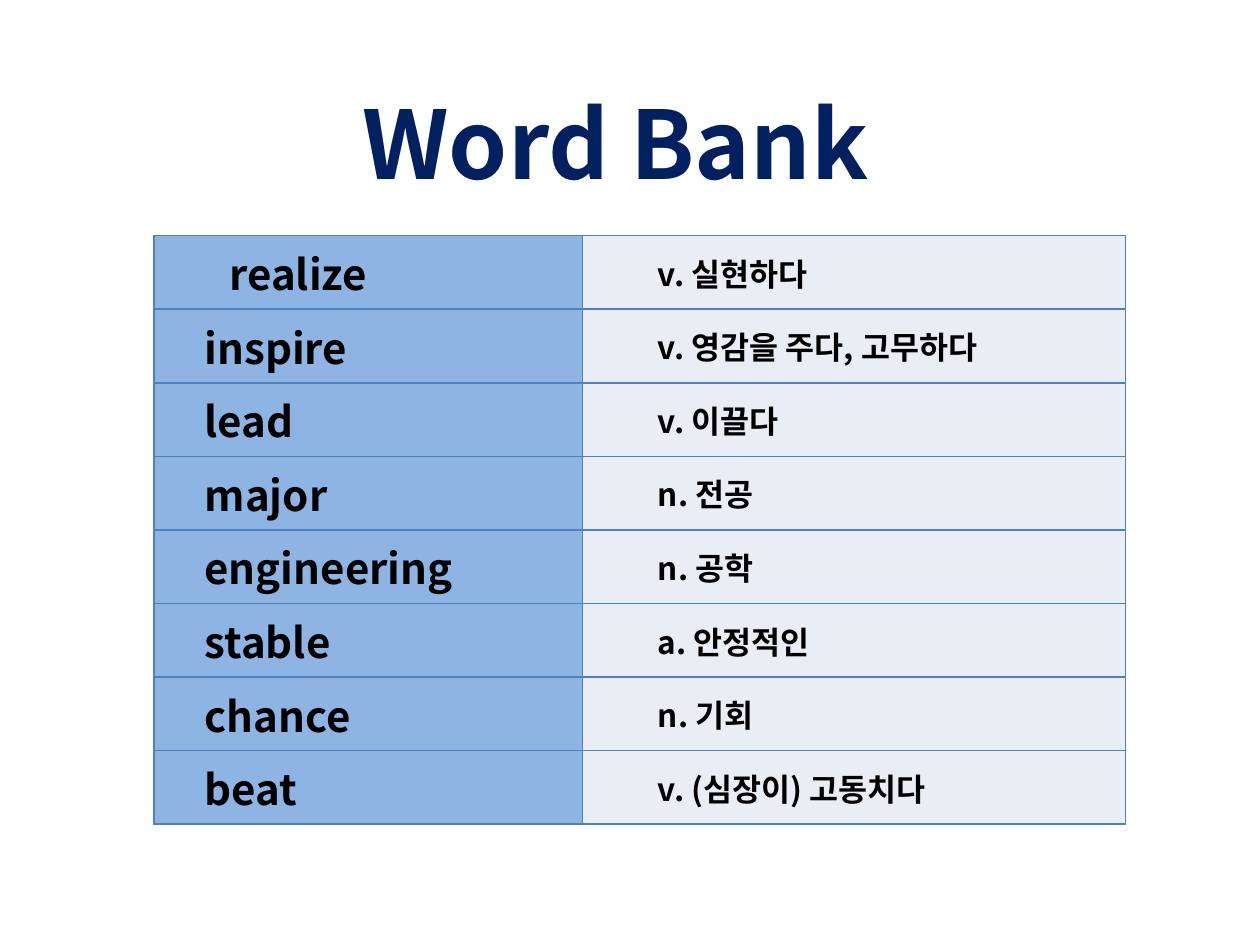
from dataclasses import dataclass

from lxml import etree
from pptx import Presentation
from pptx.dml.color import RGBColor
from pptx.enum.text import MSO_ANCHOR, MSO_AUTO_SIZE, PP_ALIGN
from pptx.oxml.ns import qn
from pptx.util import Cm, Length, Pt

MIDDLE = MSO_ANCHOR.MIDDLE
CENTER = PP_ALIGN.CENTER
NO_AUTOFIT = MSO_AUTO_SIZE.NONE

FONT_NAME = "Noto Sans CJK KR"
NAVY = RGBColor(0x00, 0x20, 0x60)
BLACK = RGBColor(0x00, 0x00, 0x00)
WORD_FILL = RGBColor(0x8E, 0xB4, 0xE3)
MEANING_FILL = RGBColor(0xE9, 0xED, 0xF4)
BORDER = RGBColor(0x4F, 0x81, 0xBD)

TITLE_ONLY = 5
COLUMN_WIDTHS = (Cm(8.64), Cm(10.95))
ROW_HEIGHT = Cm(1.42)
WORD_INDENT = Cm(0.77)
DEEP_INDENT = Cm(1.27)


@dataclass(frozen=True)
class Entry:
    word: str
    meaning: str
    word_indent: Length = WORD_INDENT


ENTRIES = (
    Entry("realize", "v. 실현하다", DEEP_INDENT),
    Entry("inspire", "v. 영감을 주다, 고무하다"),
    Entry("lead", "v. 이끌다"),
    Entry("major", "n. 전공"),
    Entry("engineering", "n. 공학"),
    Entry("stable", "a. 안정적인"),
    Entry("chance", "n. 기회"),
    Entry("beat", "v. (심장이) 고동치다"),
)


def format_paragraph(paragraph, size: int, color: RGBColor) -> None:
    """Set the font for both Latin and Korean text."""
    font = paragraph.font
    font.size = Pt(size)
    font.bold = True
    font.color.rgb = color
    font.name = FONT_NAME
    etree.SubElement(font._rPr, qn("a:ea"), typeface=FONT_NAME)


def add_borders(cell) -> None:
    properties = cell._tc.get_or_add_tcPr()
    for position, side in enumerate(("a:lnL", "a:lnR", "a:lnT", "a:lnB")):
        line = etree.Element(qn(side), w=str(Pt(1)))
        fill = etree.SubElement(line, qn("a:solidFill"))
        etree.SubElement(fill, qn("a:srgbClr"), val=str(BORDER))
        properties.insert(position, line)


def fill_cell(cell, text: str, size: int, indent: Length, color: RGBColor) -> None:
    cell.text = text
    cell.vertical_anchor = MIDDLE
    cell.fill.solid()
    cell.fill.fore_color.rgb = color
    add_borders(cell)
    paragraph = cell.text_frame.paragraphs[0]
    paragraph_properties = paragraph._p.get_or_add_pPr()
    paragraph_properties.set("marL", str(indent))
    paragraph_properties.set("indent", "0")
    format_paragraph(paragraph, size, BLACK)


def add_title(slide, text: str) -> None:
    title = slide.shapes.title
    title.left, title.top = Cm(5.51), Cm(1.57)
    title.width, title.height = Cm(13.79), Cm(2.57)
    frame = title.text_frame
    frame.text = text
    frame.auto_size = NO_AUTOFIT
    frame.vertical_anchor = MIDDLE
    paragraph = frame.paragraphs[0]
    paragraph.alignment = CENTER
    format_paragraph(paragraph, 54, NAVY)


def add_word_table(slide, entries: tuple[Entry, ...]) -> None:
    table = slide.shapes.add_table(
        len(entries), len(COLUMN_WIDTHS), Cm(3.1), Cm(4.75),
        sum(COLUMN_WIDTHS), ROW_HEIGHT * len(entries),
    ).table
    table.first_row = False
    table.horz_banding = False
    for column, width in zip(table.columns, COLUMN_WIDTHS):
        column.width = width
    for index, entry in enumerate(entries):
        fill_cell(table.cell(index, 0), entry.word, 24, entry.word_indent, WORD_FILL)
        fill_cell(table.cell(index, 1), entry.meaning, 18, DEEP_INDENT, MEANING_FILL)


def main() -> None:
    presentation = Presentation()
    presentation.slide_width = Cm(25.4)
    presentation.slide_height = Cm(19.05)
    slide = presentation.slides.add_slide(presentation.slide_layouts[TITLE_ONLY])
    add_title(slide, "Word Bank")
    add_word_table(slide, ENTRIES)
    presentation.save("out.pptx")


if __name__ == "__main__":
    main()
